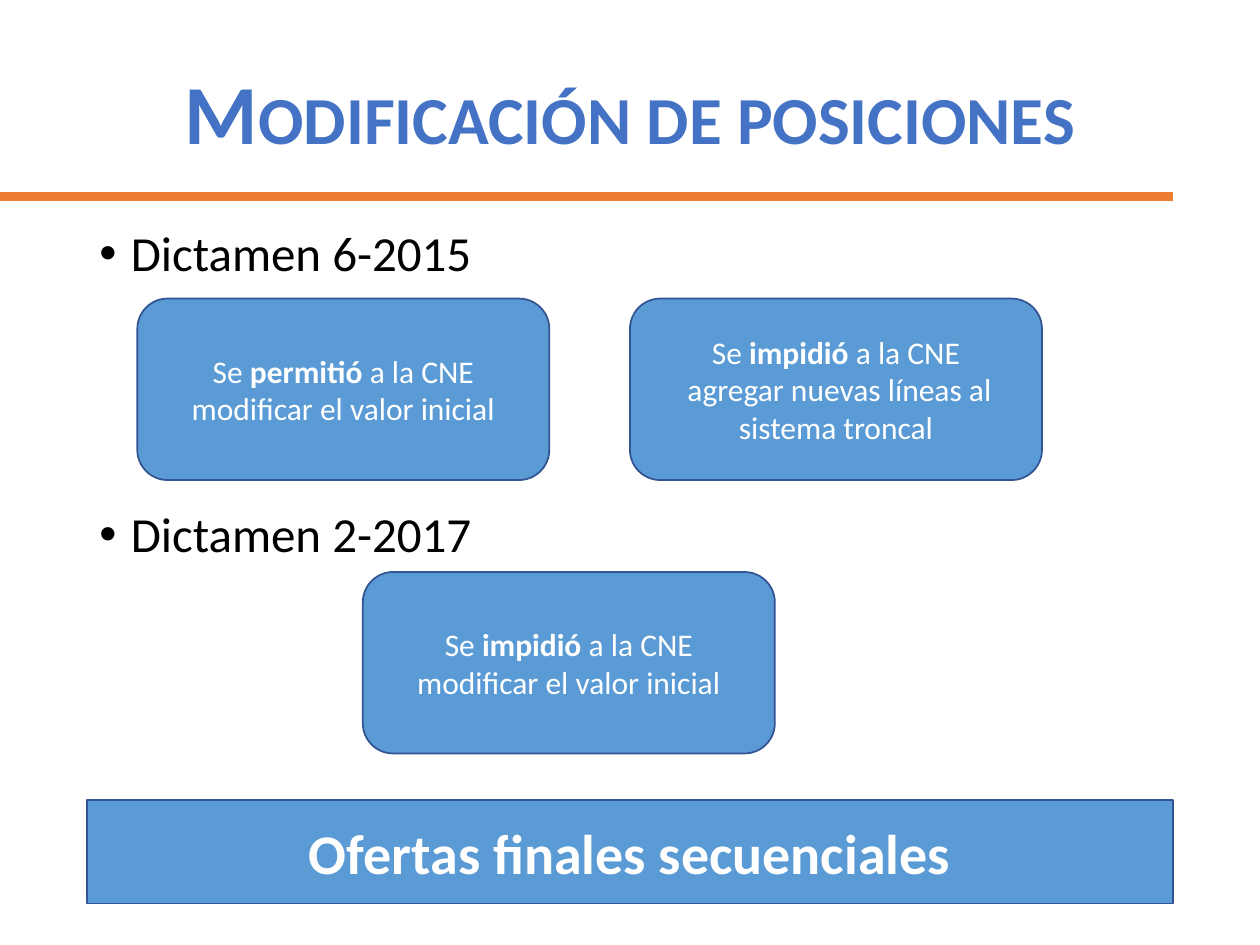
import dataclasses

import lxml.etree
import pptx
import pptx.dml.color
import pptx.enum.shapes
import pptx.enum.text
import pptx.oxml.ns
import pptx.util

SHAPES = pptx.enum.shapes.MSO_SHAPE
ALIGN = pptx.enum.text.PP_ALIGN
ANCHOR = pptx.enum.text.MSO_ANCHOR


@dataclasses.dataclass(frozen=True)
class Theme:
    font: str = "Calibri"
    title: str = "4472C4"
    rule: str = "ED7D31"
    fill: str = "5B9BD5"
    outline: str = "325491"
    ink: str = "000000"
    light: str = "FFFFFF"
    title_size: int = 48
    banner_size: int = 32
    bullet_size: int = 28
    card_size: int = 18
    rule_width: int = 5
    outline_width: int = 1


def rgb(value):
    return pptx.dml.color.RGBColor.from_string(value)


def apply(target, formats):
    for name, value in formats.items():
        setattr(target, name, value)


class SlideBuilder:
    COLUMNS, ROWS = 100, 75

    def __init__(self, deck, theme):
        self.theme = theme
        self.column = deck.slide_width / self.COLUMNS
        self.row = deck.slide_height / self.ROWS
        self.slide = deck.slides.add_slide(deck.slide_layouts[6])

    def place(self, column, row, columns, rows):
        return (round(column * self.column), round(row * self.row),
                round(columns * self.column), round(rows * self.row))

    def phrase(self, paragraph, text, size, color, bold=False):
        for index, line in enumerate(text.split("\n")):
            if index:
                paragraph.add_line_break()
            run = paragraph.add_run()
            run.text = line
            apply(run.font, {"name": self.theme.font, "bold": bold,
                             "size": pptx.util.Pt(size)})
            run.font.color.rgb = rgb(color)
        return run

    def text_frame(self, area, anchor):
        frame = self.slide.shapes.add_textbox(*self.place(*area)).text_frame
        apply(frame, {"word_wrap": True, "vertical_anchor": anchor})
        return frame

    def title(self, area, text):
        paragraph = self.text_frame(area, ANCHOR.MIDDLE).paragraphs[0]
        apply(paragraph, {"alignment": ALIGN.CENTER, "line_spacing": 0.9})
        run = self.phrase(paragraph, text, self.theme.title_size,
                          self.theme.title, True)
        run._r.get_or_add_rPr().set("cap", "small")

    def bullets(self, area, items, gap):
        frame = self.text_frame(area, ANCHOR.TOP)
        indent = pptx.util.Inches(0.25)
        for index, text in enumerate(items):
            paragraph = frame.add_paragraph() if index else frame.paragraphs[0]
            apply(paragraph, {"line_spacing": 0.9,
                              "space_before": pptx.util.Pt(gap if index else 0)})
            self.phrase(paragraph, text, self.theme.bullet_size, self.theme.ink)
            properties = paragraph._p.get_or_add_pPr()
            properties.set("marL", str(indent))
            properties.set("indent", str(-indent))
            for tag, name, value in (("a:buFont", "typeface", "Arial"),
                                     ("a:buChar", "char", "•")):
                lxml.etree.SubElement(
                    properties, pptx.oxml.ns.qn(tag)).set(name, value)

    def rule(self, start, end, row):
        y = round(row * self.row)
        line = self.slide.shapes.add_connector(
            pptx.enum.shapes.MSO_CONNECTOR.STRAIGHT,
            round(start * self.column), y, round(end * self.column), y)
        line.line.color.rgb = rgb(self.theme.rule)
        line.line.width = pptx.util.Pt(self.theme.rule_width)
        lxml.etree.SubElement(line._element.spPr,
                              pptx.oxml.ns.qn("a:effectLst"))

    def panel(self, preset, area, phrases, size):
        panel = self.slide.shapes.add_shape(preset, *self.place(*area))
        panel.shadow.inherit = False
        panel.fill.solid()
        panel.fill.fore_color.rgb = rgb(self.theme.fill)
        panel.line.color.rgb = rgb(self.theme.outline)
        panel.line.width = pptx.util.Pt(self.theme.outline_width)
        frame = panel.text_frame
        apply(frame, {"word_wrap": True, "vertical_anchor": ANCHOR.MIDDLE})
        paragraph = frame.paragraphs[0]
        paragraph.alignment = ALIGN.CENTER
        for text, bold in phrases:
            self.phrase(paragraph, text, size, self.theme.light, bold)

    def card(self, column, row, verb, rest):
        self.panel(SHAPES.ROUNDED_RECTANGLE, (column, row, 32.7, 14.4),
                   (("Se ", False), (verb, True), (rest, False)),
                   self.theme.card_size)

    def banner(self, area, text):
        self.panel(SHAPES.RECTANGLE, area, ((text, True),),
                   self.theme.banner_size)


def main():
    deck = pptx.Presentation()
    apply(deck, {"slide_width": pptx.util.Inches(10),
                 "slide_height": pptx.util.Inches(7.5)})
    builder = SlideBuilder(deck, Theme())
    margin = 6.9
    width = builder.COLUMNS - 2 * margin
    upper_row, lower_row = 23.7, 45.4

    builder.title((margin, 4, width, 10.7), "Modificación de posiciones")
    builder.bullets((margin, 17.7, width, 49.8),
                    ("Dictamen 6-2015", "Dictamen 2-2017"), gap=130)
    builder.rule(margin + width, 0, 15.6)

    change_value = " a la CNE modificar el valor inicial"
    add_lines = " a la CNE\n agregar nuevas líneas al sistema troncal"
    for column, row, verb, rest in (
            (10.9, upper_row, "permitió", change_value),
            (50, upper_row, "impidió", add_lines),
            (28.8, lower_row, "impidió", change_value)):
        builder.card(column, row, verb, rest)

    builder.banner((margin, 63.5, width, 8.2), "Ofertas finales secuenciales")
    deck.save("out.pptx")


if __name__ == "__main__":
    main()
